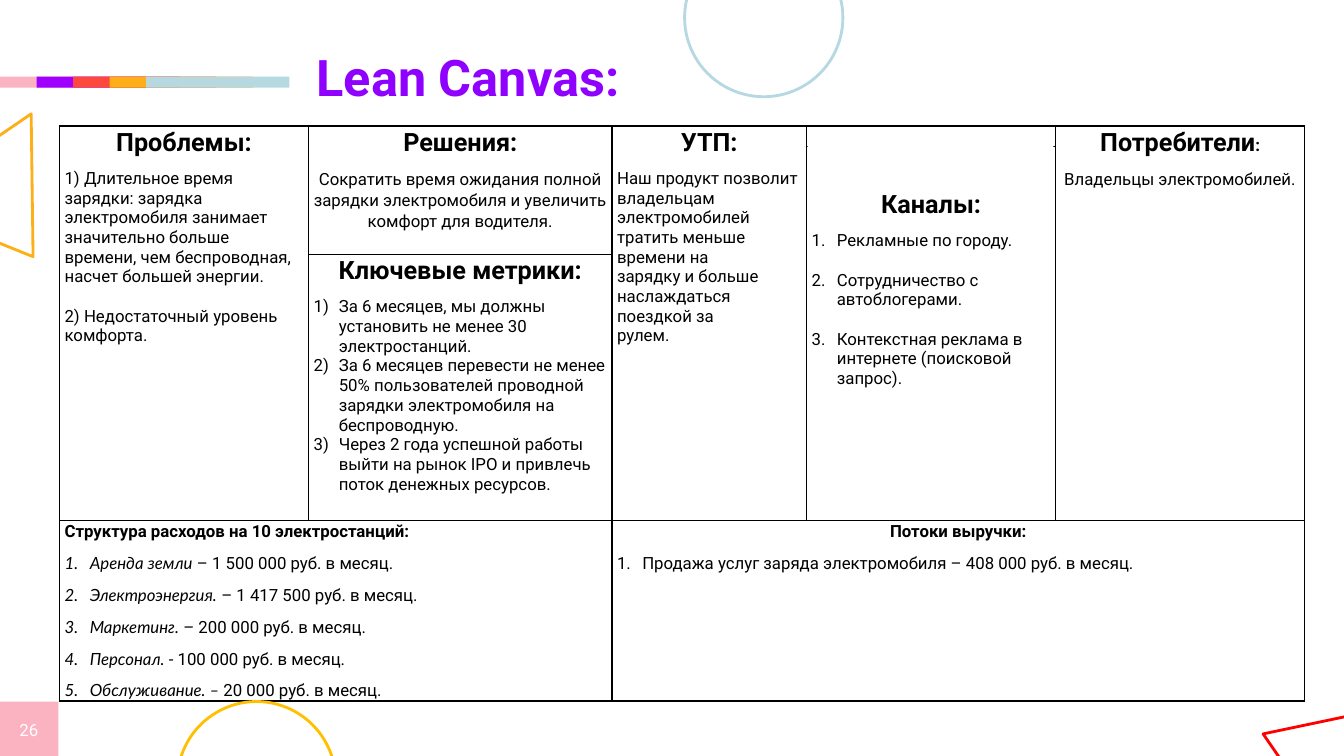
from dataclasses import dataclass
from lxml import etree
from pptx import Presentation
from pptx import util as u
from pptx.dml.color import RGBColor
from pptx.enum import shapes, text
from pptx.oxml.ns import qn


@dataclass(frozen=True)
class Theme:
    font: str = "Roboto"
    slant: str = "Lato"
    big: int = 36
    head: int = 18
    body: int = 12
    gap: int = 8
    line: float = 1.07
    ink: str = "000000"
    white: str = "FFFFFF"
    title: str = "8F00FF"
    pink: str = "FBB3C1"
    bars: tuple = ("FBB3C1", "9F00FF", "FD493D", "FCAF17", "B5D8E1")
    orange: str = "FDAF18"
    gold: str = "FFC000"
    red: str = "FF0000"
    blue: str = "B5D8E2"


T = Theme()
WIDE, HIGH = u.Inches(13.33), u.Inches(7.5)
MID = text.PP_ALIGN.CENTER
KIND = shapes.MSO_SHAPE
COLS = (18.53, 22.58, 14.48, 18.53, 18.53)
ROWS = (2.67, 14, 35.2, 23.87)
SPANS = (((0, 0), (2, 0)), ((0, 1), (1, 1)), ((0, 2), (2, 2)), ((0, 4), (2, 4)),
         ((1, 3), (2, 3)), ((3, 0), (3, 1)), ((3, 2), (3, 4)))
COSTS = (("Аренда земли", " – 1 500 000 руб. в месяц."),
         ("Электроэнергия.", " – 1 417 500 руб. в месяц."),
         ("Маркетинг.", " – 200 000 руб. в месяц."),
         ("Персонал.", " - 100 000 руб. в месяц."),
         ("Обслуживание. – ", "20 000 руб. в месяц."))


def across(share):
    return u.Emu(round(WIDE * share / 100))


def down(share):
    return u.Emu(round(HIGH * share / 100))


def box(x, y, w, h):
    return across(x), down(y), across(w), down(h)


def write(par, words, size=T.body, font=T.font, color=T.ink, bold=False, slant=False):
    run = par.add_run()
    run.text = words
    face = run.font
    face.size, face.name, face.bold, face.italic = u.Pt(size), font, bold, slant
    face.color.rgb = RGBColor.from_string(color)


def para(frame, words="", align=None, lines=1, gap=0, mark=None, **style):
    par = frame.paragraphs[0]
    if par.runs:
        par = frame.add_paragraph()
    par.alignment = align or text.PP_ALIGN.LEFT
    par.line_spacing, par.space_after = lines, u.Pt(gap)
    if mark:
        props = par._p.get_or_add_pPr()
        props.set("marL", str(u.Inches(0.25)))
        props.set("indent", str(u.Inches(-0.25)))
        etree.SubElement(props, qn("a:buFont"), typeface=T.font)
        etree.SubElement(props, qn("a:buAutoNum"), type=mark)
    if words:
        write(par, words, **style)
    return par


def head(frame, words, size=T.head, align=MID):
    return para(frame, words, align, T.line, T.gap, size=size, bold=True)


def note(frame, words):
    para(frame, words, MID, T.line, T.gap)


def shape(page, kind, place, fill=T.white, line=None, turn=0):
    item = page.shapes.add_shape(kind, *box(*place))
    item.shadow.inherit = False
    item.fill.solid()
    item.fill.fore_color.rgb = RGBColor.from_string(fill)
    item.rotation = turn
    if line:
        item.line.color.rgb = RGBColor.from_string(line)
        item.line.width = u.Pt(2)
    else:
        item.line.fill.background()


def label(page, place, words, align=None, **style):
    frame = page.shapes.add_textbox(*box(*place)).text_frame
    frame.word_wrap = True
    frame.vertical_anchor = text.MSO_ANCHOR.MIDDLE
    frame.margin_left = frame.margin_right = u.Inches(0.05)
    frame.margin_top = frame.margin_bottom = u.Inches(0.05)
    para(frame, words, align, **style)


def edge(cell):
    cell.margin_left = cell.margin_right = u.Inches(0.05)
    cell.margin_top = cell.margin_bottom = 0
    cell.fill.background()
    props = cell._tc.get_or_add_tcPr()
    for spot, side in enumerate(("lnL", "lnR", "lnT", "lnB")):
        rule = etree.Element(qn(f"a:{side}"), w=str(u.Pt(1)))
        fill = etree.SubElement(rule, qn("a:solidFill"))
        etree.SubElement(fill, qn("a:srgbClr"), val=T.ink)
        props.insert(spot, rule)
    par = cell.text_frame.paragraphs[0]._p
    etree.SubElement(par, qn("a:endParaRPr"), sz=str(T.body * 100))


def grid(page):
    place = box(4.43, 16.67, sum(COLS), sum(ROWS))
    table = page.shapes.add_table(len(ROWS), len(COLS), *place).table
    table.first_row = table.horz_banding = False
    for col, share in zip(table.columns, COLS):
        col.width = across(share)
    for row, share in zip(table.rows, ROWS):
        row.height = down(share)
    for cell in table.iter_cells():
        edge(cell)
    for start, end in SPANS:
        table.cell(*start).merge(table.cell(*end))
    return table


def fill(table):
    def at(row, col):
        return table.cell(row, col).text_frame

    pains = at(0, 0)
    head(pains, "Проблемы:")
    para(pains, "1) Длительное время")
    para(pains, "зарядки: зарядка электромобиля занимает")
    para(pains, "значительно больше времени, чем беспроводная, насчет большей энергии.", gap=14)
    para(pains, "2) Недостаточный уровень комфорта.")

    fixes = at(0, 1)
    head(fixes, "Решения:")
    note(fixes, "Сократить время ожидания полной зарядки электромобиля "
                "и увеличить комфорт для водителя.")

    goals = at(2, 1)
    head(goals, "Ключевые метрики:")
    for words in ("За 6 месяцев, мы должны установить не менее 30 электростанций.",
                  "За 6 месяцев перевести не менее 50% пользователей проводной "
                  "зарядки электромобиля на беспроводную.",
                  "Через 2 года успешной работы выйти на рынок IPO и привлечь "
                  "поток денежных ресурсов."):
        para(goals, words, mark="arabicParenR")

    offer = at(0, 2)
    head(offer, "УТП:")
    for words in ("Наш продукт позволит", "владельцам электромобилей тратить меньше",
                  "времени на", "зарядку и больше наслаждаться поездкой за", "рулем."):
        para(offer, words)

    table.cell(1, 3).margin_top = u.Inches(0.42)
    paths = at(1, 3)
    head(paths, "Каналы:")
    for words in ("Рекламные по городу.", "Сотрудничество с автоблогерами.",
                  "Контекстная реклама в интернете (поисковой запрос)."):
        para(paths, words, gap=14, mark="arabicPeriod")

    users = at(0, 4)
    write(head(users, "Потребители"), ":", bold=True)
    note(users, "Владельцы электромобилей.")

    costs = at(3, 0)
    head(costs, "Структура расходов на 10 электростанций:", T.body, text.PP_ALIGN.LEFT)
    for name, sum_ in COSTS:
        par = para(costs, name, gap=T.gap, mark="arabicPeriod", font=T.slant, slant=True)
        write(par, sum_)

    gains = at(3, 2)
    head(gains, "Потоки выручки:", T.body)
    para(gains, "Продажа услуг заряда электромобиля – 408 000 руб. в месяц.",
         lines=T.line, gap=T.gap, mark="arabicPeriod")


def main():
    deck = Presentation()
    deck.slide_width, deck.slide_height = WIDE, HIGH
    page = deck.slides.add_slide(deck.slide_layouts[6])
    shape(page, KIND.RECTANGLE, (-0.08, 92.8, 4.43, 7.33), T.pink)
    label(page, (0.23, 95.07, 3.83, 2.93), "26", MID, color=T.white)
    fill(grid(page))
    shape(page, KIND.RECTANGLE, (60.09, 16.93, 18.3, 6.4))
    for step, color in enumerate(T.bars):
        shape(page, KIND.RECTANGLE, (2.72 * step, 10.13, 10.65, 1.47), color)
    label(page, (23.18, 5.47, 76.82, 9.33), "Lean Canvas:",
          size=T.big, color=T.title, bold=True)
    tri, disc = (11.78, 15.73), (11.78, 20.93)
    shape(page, KIND.ISOSCELES_TRIANGLE, (-5.93, 19.6, *tri), line=T.orange, turn=145.6)
    shape(page, KIND.OVAL, (13.2, 92.8, *disc), line=T.gold)
    shape(page, KIND.ISOSCELES_TRIANGLE, (92.2, 92.13, *tri), line=T.red, turn=291.8)
    shape(page, KIND.OVAL, (50.94, -8.13, *disc), line=T.blue)
    deck.save("out.pptx")


if __name__ == "__main__":
    main()
